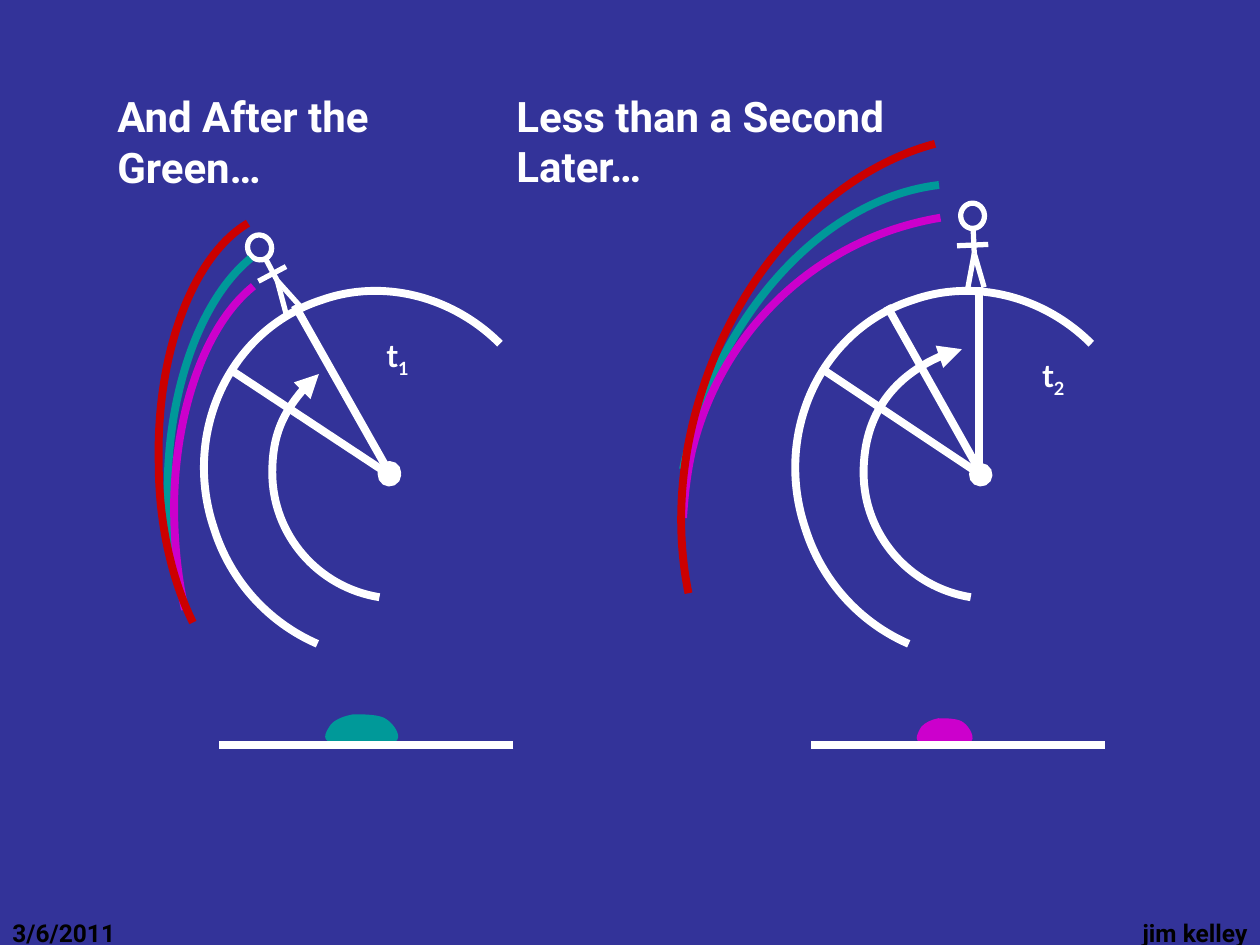
from dataclasses import dataclass
from math import cos, radians, sin

from lxml import etree
from pptx import Presentation
from pptx import util as u
from pptx.dml import color
from pptx.enum import shapes, text
from pptx.oxml import ns


@dataclass(frozen=True)
class Theme:
    """Colours, fonts and sizes of the slide."""
    background: str = "333399"
    white: str = "FFFFFF"
    black: str = "000000"
    red: str = "CC0000"
    green: str = "009999"
    violet: str = "CC00CC"
    heading_font: str = "Roboto"
    label_font: str = "Lato"
    heading_size: int = 24
    label_size: int = 18
    footer_size: int = 14
    thick: float = 4.5
    thin: float = 3


THEME = Theme()
GLOBE = [(7.54, 4.39), (6.58, 3.43), (5.18, 3.07), (3.94, 3.51), (2.08, 4.11),
         (1.12, 6.2), (1.78, 8.13), (2.11, 9.17), (2.87, 10.01), (3.86, 10.44)]
SPIN_START = [(5.11, 9.5), (3.86, 9.3), (2.95, 8.23), (2.95, 6.99)]
GROUND = [(7.81, 12.48), (1.88, 12.48)]
FLASH = [(0.88, 0.88), (1, 0.76), (0.87, 0.28), (0.79, 0.16), (0.72, 0), (0.51, 0),
         (0.4, 0), (0.3, 0.04), (0.18, 0.16), (0.13, 0.32), (0.09, 0.48), (0, 0.8),
         (0.13, 0.88), (0.25, 1), (0.76, 1), (0.88, 0.88)]
FIGURE_LIMBS = [((0, 0), (0.17, 0.69)), ((0, 0), (-0.16, 0.69)),
                ((0, -0.51), (0, 0)), ((0.29, -0.17), (-0.34, -0.17))]
OVAL = dict(headEnd="oval")
PANELS = [
    dict(box=(2.54, 2.54), number="1", label=(5, 4.11),
         spin_end=[(2.95, 6.22), (3.3, 5.49), (3.89, 5)],
         flash=(3.91, 11.86, 1.7, 0.64), flash_color=THEME.green,
         hip=(3.05, 3.12), tilt=-28,
         radii=[((5.31, 7.03), (2.13, 4.93), OVAL), ((5.31, 6.99), (3.4, 3.61), OVAL)],
         waves={
             THEME.green: [(0.97, 8.94), (0.89, 8.41), (0.84, 7.85), (0.84, 7.26),
                           (0.86, 5.28), (1.52, 3.48), (2.51, 2.67)],
             THEME.violet: [(1.19, 9.75), (1.04, 9.09), (0.97, 8.38), (0.97, 7.65),
                            (0.99, 5.74), (1.6, 4.01), (2.57, 3.23)],
             THEME.red: [(1.35, 10.01), (0.91, 9.12), (0.66, 7.98), (0.66, 6.78),
                         (0.61, 4.57), (1.35, 2.62), (2.46, 1.96)]}),
    dict(box=(14.46, 2.54), number="2", label=(6.3, 4.52),
         spin_end=[(2.95, 5.79), (3.78, 4.78), (4.93, 4.5)],
         flash=(3.94, 11.94, 1.3, 0.56), flash_color=THEME.violet,
         hip=(5.18, 2.57), tilt=-2.5,
         radii=[((5.31, 7.03), (2.13, 4.91), OVAL), ((5.32, 7.01), (3.42, 3.63), {}),
                ((5.28, 3.25), (5.28, 6.93), {})],
         waves={
             THEME.green: [(-0.69, 6.92), (-0.03, 3.84), (2.11, 1.47), (4.47, 1.19)],
             THEME.violet: [(-0.69, 7.9), (-0.66, 7.44), (-0.61, 6.99), (-0.51, 6.55),
                            (0.08, 4.11), (2.03, 2.26), (4.5, 1.85)],
             THEME.red: [(-0.58, 9.42), (-0.86, 8.05), (-0.74, 6.55), (-0.23, 5.11),
                         (0.61, 2.72), (2.39, 0.89), (4.39, 0.36)]}),
]


def apply(target, values):
    """Set every attribute in the dict on the target."""
    for name, value in values.items():
        setattr(target, name, value)


def shift(origin, point):
    """Move a point by the origin."""
    return origin[0] + point[0], origin[1] + point[1]


def format_line(shape, line_color, width, **ends):
    """Colour a line, and give it the named end markers."""
    shape.line.color.rgb = color.RGBColor.from_string(line_color)
    shape.line.width = u.Pt(width)
    for name, marker in ends.items():
        etree.SubElement(shape.line._get_or_add_ln(), ns.qn(f"a:{name}"), type=marker)


def add_line(slide, start, end, width, **ends):
    """Draw a straight white line."""
    line = slide.shapes.add_connector(
        shapes.MSO_CONNECTOR.STRAIGHT, *(u.Cm(value) for value in (*start, *end)))
    format_line(line, THEME.white, width, **ends)
    etree.SubElement(line._element.spPr, ns.qn("a:effectLst"))


def add_curve(slide, box, controls, close=False):
    """Draw an unfilled chain of cubic curves relative to the box."""
    first, *rest = [tuple(u.Cm(value) for value in shift(box, point)) for point in controls]
    builder = slide.shapes.build_freeform(*first)
    builder.add_line_segments(rest, close=close)
    curve = builder.convert_to_shape()
    segments = list(curve._element.iter(ns.qn("a:lnTo")))
    for index in range(0, len(rest), 3):
        cubic = etree.Element(ns.qn("a:cubicBezTo"))
        segments[index].addprevious(cubic)
        for segment in segments[index:index + 3]:
            cubic.append(segment[0])
            segment.getparent().remove(segment)
    curve.shadow.inherit = False
    curve.fill.background()
    return curve


def fill_text(shape, runs, font, size, font_color, align=text.PP_ALIGN.LEFT, wrap=True):
    """Write one bold paragraph of (text, baseline) runs."""
    apply(shape.text_frame, dict(word_wrap=wrap, auto_size=text.MSO_AUTO_SIZE.NONE,
                                 vertical_anchor=text.MSO_ANCHOR.TOP))
    paragraph = shape.text_frame.paragraphs[0]
    paragraph.alignment = align
    for words, baseline in runs:
        run = paragraph.add_run()
        run.text = words
        apply(run.font, dict(name=font, size=u.Pt(size), bold=True))
        run.font.color.rgb = color.RGBColor.from_string(font_color)
        if baseline:
            run.font._element.set("baseline", str(baseline))


def add_text(slide, box, *arguments, **options):
    """Add a text box with formatted text."""
    shape = slide.shapes.add_textbox(*map(u.Cm, box))
    fill_text(shape, *arguments, **options)


def add_figure(slide, hip, tilt):
    """Draw a stick figure tilted about its hip."""
    angle = radians(tilt)

    def place(point):
        """Rotate a figure point and move it to the hip."""
        x, y = point
        return shift(hip, (x * cos(angle) - y * sin(angle), x * sin(angle) + y * cos(angle)))

    for start, end in FIGURE_LIMBS:
        add_line(slide, place(start), place(end), THEME.thin)
    x, y = place((0, -0.76))
    width, height = 0.48, 0.51
    head = slide.shapes.add_shape(
        shapes.MSO_SHAPE.OVAL,
        *map(u.Cm, (x - width / 2, y - height / 2, width, height)))
    head.rotation = tilt
    head.shadow.inherit = False
    head.fill.background()
    format_line(head, THEME.white, THEME.thin)


def add_panel(slide, box, number, label, spin_end, flash, flash_color, hip, tilt, radii, waves):
    """Draw one moment: globe, observer, flash and light waves."""
    format_line(add_curve(slide, box, GLOBE), THEME.white, THEME.thick)
    spin = add_curve(slide, box, SPIN_START + spin_end)
    format_line(spin, THEME.white, THEME.thick, tailEnd="triangle")
    left, top, width, height = flash
    outline = [(left + x * width, top + y * height) for x, y in FLASH]
    glow = add_curve(slide, box, outline, close=True)
    glow.fill.solid()
    glow.fill.fore_color.rgb = color.RGBColor.from_string(flash_color)
    glow.line.fill.background()
    add_line(slide, *(shift(box, point) for point in GROUND), THEME.thick)
    add_text(slide, (*shift(box, label), 1.04, 1.02), [("t", 0), (number, -25000)],
             THEME.label_font, THEME.label_size, THEME.white, wrap=False)
    add_figure(slide, shift(box, hip), tilt)
    for start, end, markers in radii:
        add_line(slide, shift(box, start), shift(box, end), THEME.thick, **markers)
    for wave_color, points in waves.items():
        format_line(add_curve(slide, box, points), wave_color, THEME.thick)


def add_headings(slide, left, top):
    """Place the title and the second heading side by side."""
    style = (THEME.heading_font, THEME.heading_size, THEME.white)
    title = slide.shapes.title
    apply(title, dict(left=u.Cm(left), top=u.Cm(top), width=u.Cm(8.46), height=u.Cm(1.27)))
    fill_text(title, [("And After the Green…", 0)], *style)
    add_text(slide, (left + 8.05, top, 10.13, 1.27), [("Less than a Second Later…", 0)], *style)


def add_footer(slide, top, width):
    """Place the date at the left and the author at the right."""
    style = (THEME.heading_font, THEME.footer_size, THEME.black)
    add_text(slide, (0, top, 5.92, 1.32), [("3/6/2011", 0)], *style)
    add_text(slide, (width - 8.05, top, 8.05, 1.32), [("jim kelley", 0)], *style,
             align=text.PP_ALIGN.RIGHT)


def main():
    """Build and save the slide."""
    presentation = Presentation()
    apply(presentation, dict(slide_width=u.Cm(25.4), slide_height=u.Cm(19.05)))
    slide = presentation.slides.add_slide(presentation.slide_layouts[5])
    slide.background.fill.solid()
    slide.background.fill.fore_color.rgb = color.RGBColor.from_string(THEME.background)
    add_footer(slide, 18.38, 25.4)
    for panel in PANELS:
        add_panel(slide, **panel)
    add_headings(slide, 2.11, 1.7)
    presentation.save("out.pptx")


if __name__ == "__main__":
    main()
